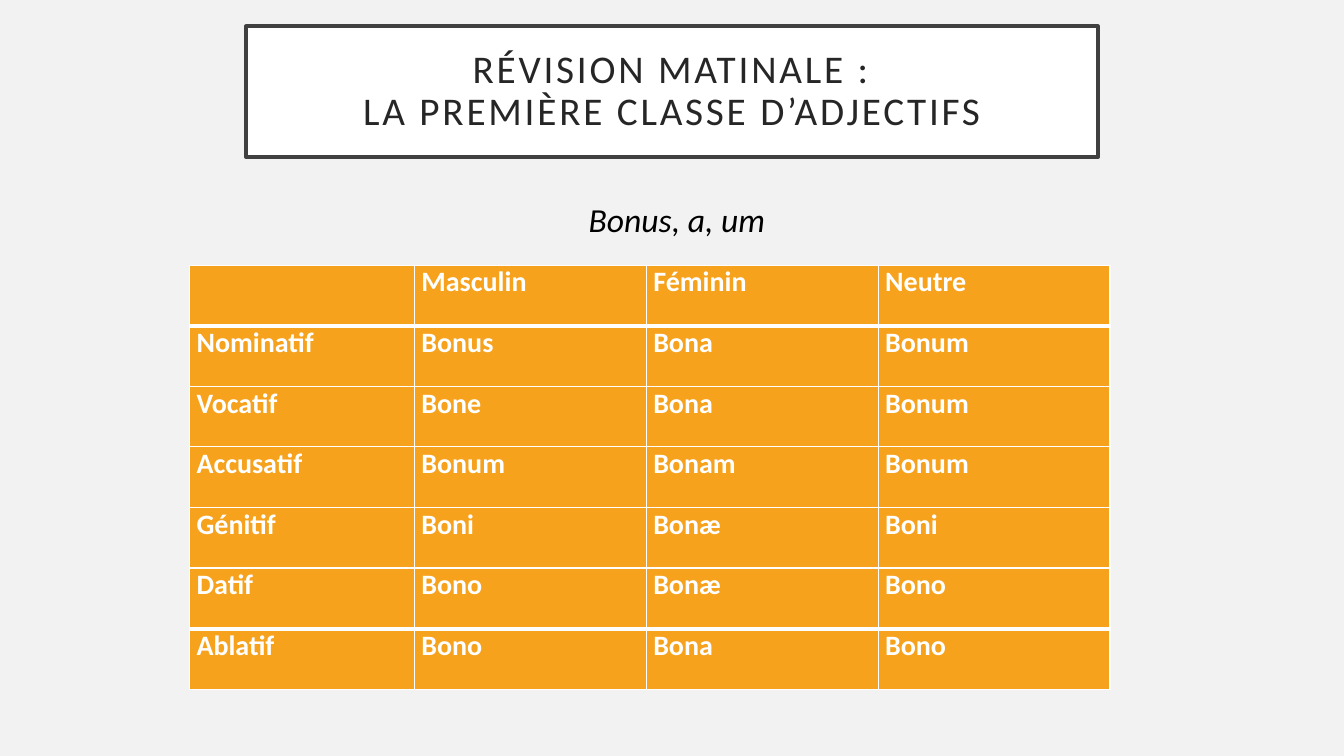
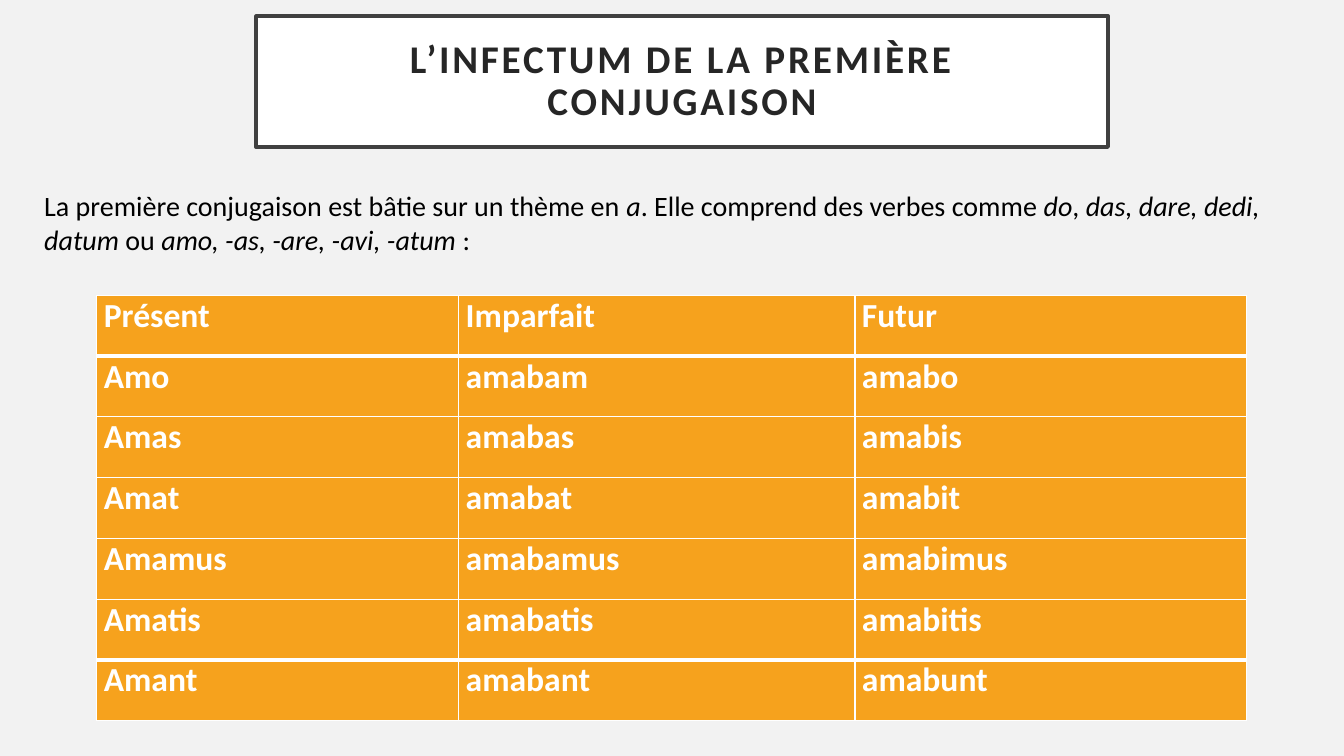
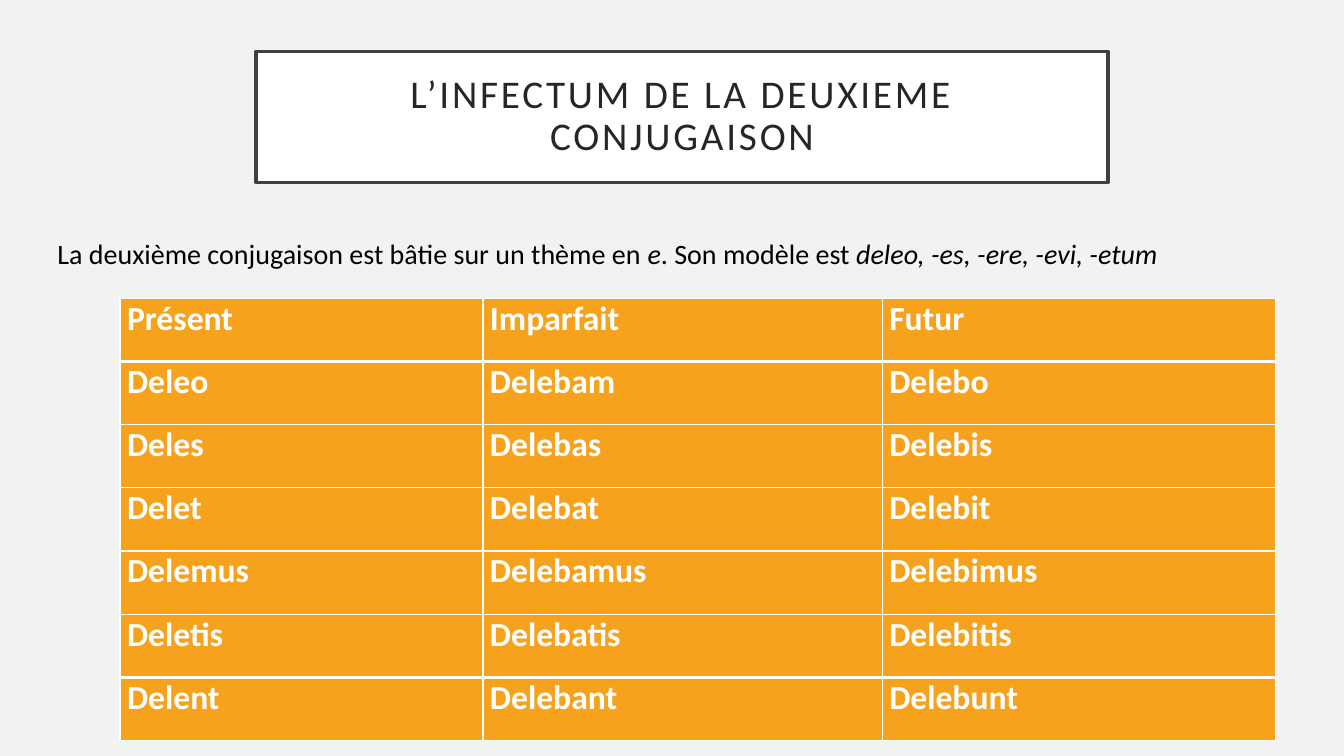
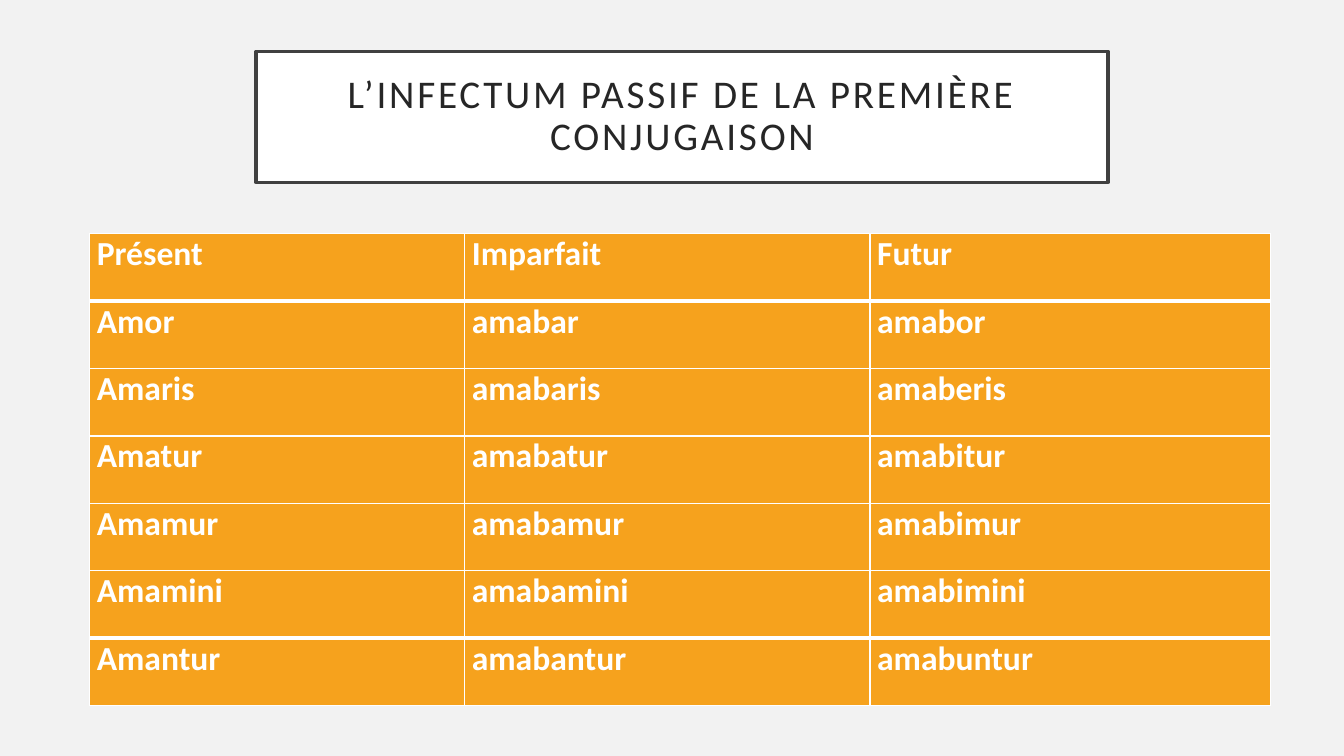
from lxml.etree import SubElement
from pptx import Presentation
from pptx.dml.color import RGBColor
from pptx.enum.shapes import MSO_SHAPE
from pptx.enum.text import MSO_ANCHOR, PP_ALIGN
from pptx.oxml.ns import qn
from pptx.util import Emu, Pt

EMU_PER_PX = 9144
FONT = "Calibri"
COLORS = {
    "background": "F2F2F2",
    "white": "FFFFFF",
    "frame": "404040",
    "title": "262626",
    "text": "000000",
    "cell": "F6A21D",
}
TENSES = "Présent Imparfait Futur"

LESSONS = [
    {
        "title": ["RÉVISION MATINALE :", "LA PREMIÈRE CLASSE D’ADJECTIFS"],
        "title_at": (244, 26),
        "intro": [("Bonus, a, um", True)],
        "intro_box": (574, 192, 216, 50),
        "intro_size": 24,
        "table_at": (188, 263),
        "table_height": 421,
        "columns": [223, 230, 230, 230],
        "cell_size": 20,
        "rows": [
            "- Masculin Féminin Neutre",
            "Nominatif Bonus Bona Bonum",
            "Vocatif Bone Bona Bonum",
            "Accusatif Bonum Bonam Bonum",
            "Génitif Boni Bonæ Boni",
            "Datif Bono Bonæ Bono",
            "Ablatif Bono Bona Bono",
        ],
    },
    {
        "title": ["L’INFECTUM DE LA PREMIÈRE CONJUGAISON"],
        "title_at": (254, 16),
        "title_bold": True,
        "intro": [
            ("La première conjugaison est bâtie sur un thème en ", False),
            ("a", True),
            (". Elle comprend des verbes comme ", False),
            ("do", True),
            (", ", False),
            ("das, dare, dedi, datum", True),
            (" ou ", False),
            ("amo, -as, -are, -avi, -atum", True),
            (" :", False),
        ],
        "intro_box": (34, 182, 1282, 111),
        "table_at": (96, 293),
        "table_height": 422,
        "columns": [359, 393, 388],
        "rows": [
            TENSES,
            "Amo amabam amabo",
            "Amas amabas amabis",
            "Amat amabat amabit",
            "Amamus amabamus amabimus",
            "Amatis amabatis amabitis",
            "Amant amabant amabunt",
        ],
    },
    {
        "title": ["L’INFECTUM DE LA DEUXIEME CONJUGAISON"],
        "title_at": (254, 51),
        "intro": [
            ("La deuxième conjugaison est bâtie sur un thème en ", False),
            ("e", True),
            (". Son modèle est ", False),
            ("deleo, -es, -ere, -evi, -etum", True),
        ],
        "intro_box": (47, 230, 1125, 77),
        "table_at": (119, 296),
        "table_height": 439,
        "columns": [360, 396, 390],
        "rows": [
            TENSES,
            "Deleo Delebam Delebo",
            "Deles Delebas Delebis",
            "Delet Delebat Delebit",
            "Delemus Delebamus Delebimus",
            "Deletis Delebatis Delebitis",
            "Delent Delebant Delebunt",
        ],
    },
    {
        "title": ["L’INFECTUM PASSIF DE LA PREMIÈRE CONJUGAISON"],
        "title_at": (254, 51),
        "table_at": (89, 232),
        "table_height": 468,
        "columns": [372, 402, 397],
        "rows": [
            TENSES,
            "Amor amabar amabor",
            "Amaris amabaris amaberis",
            "Amatur amabatur amabitur",
            "Amamur amabamur amabimur",
            "Amamini amabamini amabimini",
            "Amantur amabantur amabuntur",
        ],
    },
]


def px(*lengths):
    return [Emu(length * EMU_PER_PX) for length in lengths]


def add_run(paragraph, text, size, color, bold=False, italic=False):
    run = paragraph.add_run()
    run.text = text
    run.font.name = FONT
    run.font.size = Pt(size)
    run.font.bold = bold
    run.font.italic = italic
    run.font.color.rgb = RGBColor.from_string(COLORS[color])
    return run


presentation = Presentation()
presentation.slide_width, presentation.slide_height = px(1333, 750)
background = presentation.slide_master.background.fill
background.solid()
background.fore_color.rgb = RGBColor.from_string(COLORS["background"])

for lesson in LESSONS:
    slide = presentation.slides.add_slide(presentation.slide_layouts[6])

    # Framed title
    title = slide.shapes.add_shape(MSO_SHAPE.RECTANGLE, *px(*lesson["title_at"], 845, 130))
    title.shadow.inherit = False
    title.fill.solid()
    title.fill.fore_color.rgb = RGBColor.from_string(COLORS["white"])
    title.line.color.rgb = RGBColor.from_string(COLORS["frame"])
    title.line.width = Pt(2.5)
    frame = title.text_frame
    frame.word_wrap = True
    frame.vertical_anchor = MSO_ANCHOR.MIDDLE
    frame.margin_left, frame.margin_top, frame.margin_right, frame.margin_bottom = px(20, 20, 20, 20)
    paragraph = frame.paragraphs[0]
    paragraph.alignment = PP_ALIGN.CENTER
    paragraph.line_spacing = 0.9
    for index, line in enumerate(lesson["title"]):
        if index:
            paragraph.add_line_break()
        run = add_run(paragraph, line, 28, "title", bold=lesson.get("title_bold", False))
        run.font._element.set("spc", "200")

    # Declension or conjugation table
    rows = [row.split() for row in lesson["rows"]]
    columns = lesson["columns"]
    box = px(*lesson["table_at"], sum(columns), lesson["table_height"])
    table = slide.shapes.add_table(len(rows), len(columns), *box).table
    table.first_row = False
    table.horz_banding = False
    for column, width in zip(table.columns, px(*columns)):
        column.width = width
    last = len(rows) - 1
    for row_index, words in enumerate(rows):
        thick_top = row_index in (1, last)
        thick_bottom = row_index in (0, last - 1)
        borders = {"a:lnL": 1, "a:lnR": 1, "a:lnT": 3 if thick_top else 1, "a:lnB": 3 if thick_bottom else 1}
        for column_index, word in enumerate(words):
            cell = table.cell(row_index, column_index)
            cell.margin_left, cell.margin_top, cell.margin_right, cell.margin_bottom = px(7, 0, 7, 0)
            properties = cell._tc.get_or_add_tcPr()
            for tag, width in borders.items():
                border = SubElement(properties, qn(tag), w=str(Pt(width)))
                line_fill = SubElement(border, qn("a:solidFill"))
                SubElement(line_fill, qn("a:srgbClr"), val=COLORS["white"])
            cell.fill.solid()
            cell.fill.fore_color.rgb = RGBColor.from_string(COLORS["cell"])
            if word != "-":
                add_run(cell.text_frame.paragraphs[0], word, lesson.get("cell_size", 24), "white", bold=True)

    # Introductory sentence
    if "intro" in lesson:
        intro = slide.shapes.add_textbox(*px(*lesson["intro_box"]))
        intro.text_frame.word_wrap = True
        for text, italic in lesson["intro"]:
            add_run(intro.text_frame.paragraphs[0], text, lesson.get("intro_size", 20), "text", italic=italic)

presentation.save("out.pptx")
